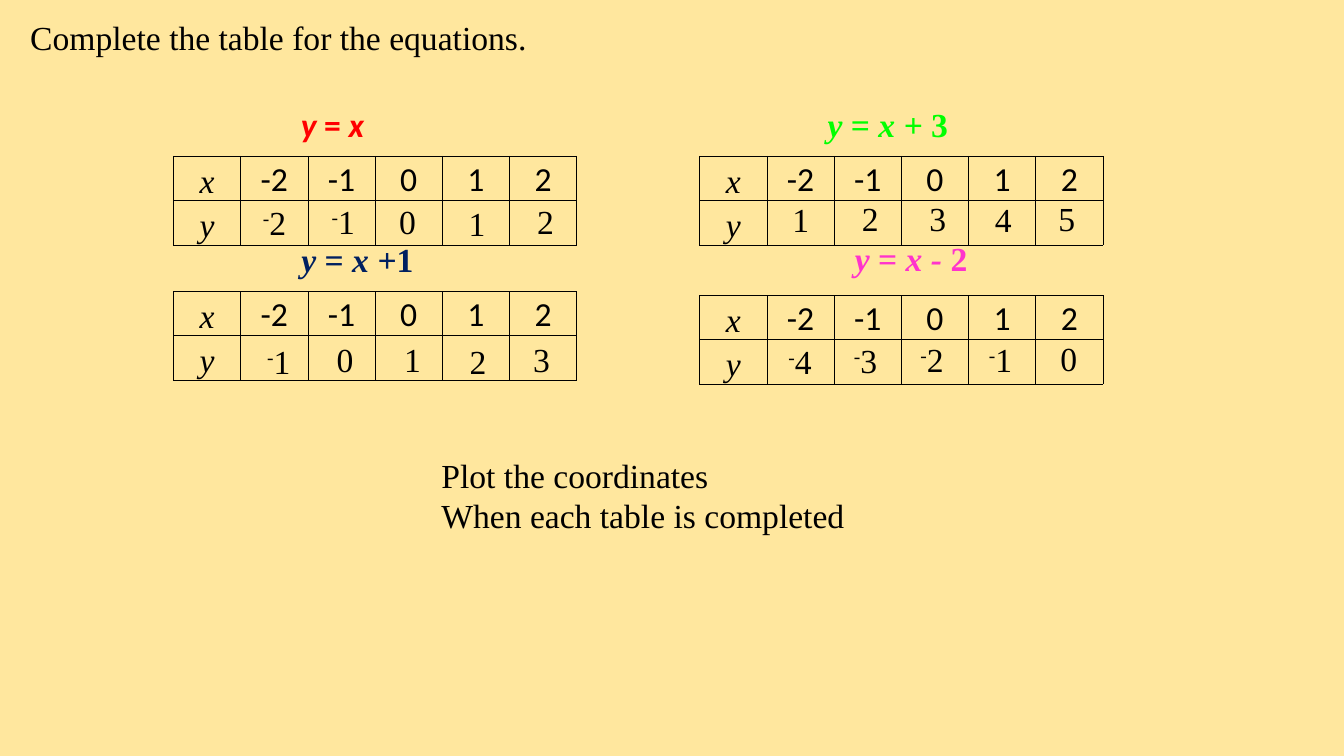
"""Build a slide of four value tables for straight-line equations."""
from dataclasses import dataclass

from lxml import etree
from pptx import Presentation
from pptx import util as u
from pptx.dml import color
from pptx.enum import text
from pptx.oxml import ns

COLOURS = {
    "background": "FFE79E",
    "ink": "000000",
    "red": "FF0000",
    "green": "00FF00",
    "navy": "002060",
    "pink": "FF33CC",
}
SERIF = "Times New Roman"
SANS = "Calibri"
X_VALUES = ("-2", "-1", "0", "1", "2")
COLUMN_WIDTH = 4 / 6
ROW_HEIGHT = 0.44


@dataclass(frozen=True)
class Run:
    """A stretch of text with its own slant and height."""
    wording: str
    italic: bool = False
    raised: bool = False


@dataclass(frozen=True)
class Answer:
    """A y value and the place of its box."""
    value: str
    left: float
    top: float


@dataclass(frozen=True)
class EquationTable:
    """A table, its equation heading and its answers."""
    left: float
    top: float
    equation: tuple[str, ...]
    heading: tuple[float, float, float]
    colour: str
    answers: tuple[Answer, ...]
    font: str = SERIF


EQUATION_TABLES = (
    EquationTable(1.72, 1.55, (" y", " = ", "x"), (2.81, 0.98, 0.91), "red", (
        Answer("-2", 2.51, 1.95), Answer("-1", 3.19, 1.94), Answer("0", 3.86, 1.94),
        Answer("1", 4.55, 1.96), Answer("2", 5.23, 1.94)), SANS),
    EquationTable(1.72, 2.89, ("y", " = ", "x +", "1"), (2.89, 2.32, 1.32), "navy", (
        Answer("-1", 2.55, 3.33), Answer("0", 3.24, 3.31), Answer("1", 3.91, 3.31),
        Answer("2", 4.56, 3.33), Answer("3", 5.19, 3.31))),
    EquationTable(6.94, 1.55, ("y", " = ", "x + ", "3"), (8.11, 0.98, 1.41), "green", (
        Answer("1", 7.76, 1.92), Answer("2", 8.45, 1.91), Answer("3", 9.12, 1.91),
        Answer("4", 9.77, 1.92), Answer("5", 10.4, 1.91))),
    EquationTable(6.94, 2.93, ("y", " = ", "x - ", "2"), (8.38, 2.31, 1.33), "pink", (
        Answer("-4", 7.72, 3.33), Answer("-3", 8.37, 3.32), Answer("-2", 9.03, 3.31),
        Answer("-1", 9.71, 3.31), Answer("0", 10.42, 3.3))),
)


def write(paragraph, *runs: Run, font: str = SERIF, colour: str = "ink",
          bold: bool = False, align=text.PP_ALIGN.LEFT) -> None:
    """Add formatted runs to a paragraph."""
    paragraph.alignment = align
    for part in runs:
        run = paragraph.add_run()
        run.text = part.wording
        run.font.name = font
        run.font.size = u.Pt(24)
        run.font.bold = bold
        run.font.italic = part.italic
        run.font.color.rgb = color.RGBColor.from_string(COLOURS[colour])
        if part.raised:
            run.font.size = u.Pt(24)
            run._r.get_or_add_rPr().set("baseline", "30000")


def add_box(slide, left: float, top: float, width: float, height: float = 0.51):
    """Add a text box that does not wrap and return its text frame."""
    shape = slide.shapes.add_textbox(*map(u.Inches, (left, top, width, height)))
    frame = shape.text_frame
    frame.word_wrap = False
    frame.auto_size = text.MSO_AUTO_SIZE.SHAPE_TO_FIT_TEXT
    return frame


def format_cell(cell) -> None:
    """Give a cell thin borders, tight margins and no fill."""
    properties = cell._tc.get_or_add_tcPr()
    for side in ("a:lnL", "a:lnR", "a:lnT", "a:lnB"):
        line = etree.SubElement(properties, ns.qn(side), w=str(u.Pt(0.5)))
        fill = etree.SubElement(line, ns.qn("a:solidFill"))
        etree.SubElement(fill, ns.qn("a:srgbClr"), val=COLOURS["ink"])
    cell.fill.background()
    cell.vertical_anchor = text.MSO_ANCHOR.BOTTOM
    cell.margin_left = cell.margin_right = cell.margin_top = u.Inches(0.01)
    cell.margin_bottom = 0


def add_table(slide, left: float, top: float) -> None:
    """Add a table of x values with an empty row for y."""
    rows = (("x", *X_VALUES), ("y",))
    columns = len(rows[0])
    table = slide.shapes.add_table(
        len(rows), columns, u.Inches(left), u.Inches(top),
        u.Inches(COLUMN_WIDTH * columns), u.Inches(ROW_HEIGHT * len(rows))).table
    table.first_row = table.horz_banding = False
    for cell in table.iter_cells():
        format_cell(cell)
    for row, values in enumerate(rows):
        for column, value in enumerate(values):
            is_label = column == 0
            write(table.cell(row, column).text_frame.paragraphs[0],
                  Run(value, italic=is_label), font=SERIF if is_label else SANS,
                  align=text.PP_ALIGN.CENTER)


def add_equation_table(slide, item: EquationTable) -> None:
    """Draw a table with its equation and its answers."""
    add_table(slide, item.left, item.top)
    runs = [Run(part, italic=index % 2 == 0) for index, part in enumerate(item.equation)]
    write(add_box(slide, *item.heading).paragraphs[0], *runs,
          font=item.font, colour=item.colour, bold=True)
    for answer in item.answers:
        digits = Run(answer.value.lstrip("-"))
        negative = answer.value.startswith("-")
        frame = add_box(slide, answer.left, answer.top, 0.45 if negative else 0.37)
        write(frame.paragraphs[0], *([Run("-", raised=True)] if negative else []), digits)


def add_title(slide, wording: str) -> None:
    """Place and format the slide title."""
    title = slide.shapes.title
    title.left, title.top, title.width, title.height = map(u.Inches, (0.2, 0.12, 7.26, 0.5))
    title.text_frame.vertical_anchor = text.MSO_ANCHOR.TOP
    title.text_frame.auto_size = text.MSO_AUTO_SIZE.NONE
    write(title.text_frame.paragraphs[0], Run(wording))


def main() -> None:
    """Build and save the presentation."""
    presentation = Presentation()
    presentation.slide_width = u.Inches(13.33)
    presentation.slide_height = u.Inches(7.5)
    slide = presentation.slides.add_slide(presentation.slide_layouts.get_by_name("Title Only"))
    slide.background.fill.solid()
    slide.background.fill.fore_color.rgb = color.RGBColor.from_string(COLOURS["background"])
    add_title(slide, "Complete the table for the equations.")
    for item in EQUATION_TABLES:
        add_equation_table(slide, item)
    instruction = add_box(slide, 4.28, 4.46, 4.23, 0.91)
    write(instruction.paragraphs[0], Run("Plot the coordinates"))
    write(instruction.add_paragraph(), Run("When each table is completed"))
    presentation.save("out.pptx")


if __name__ == "__main__":
    main()
